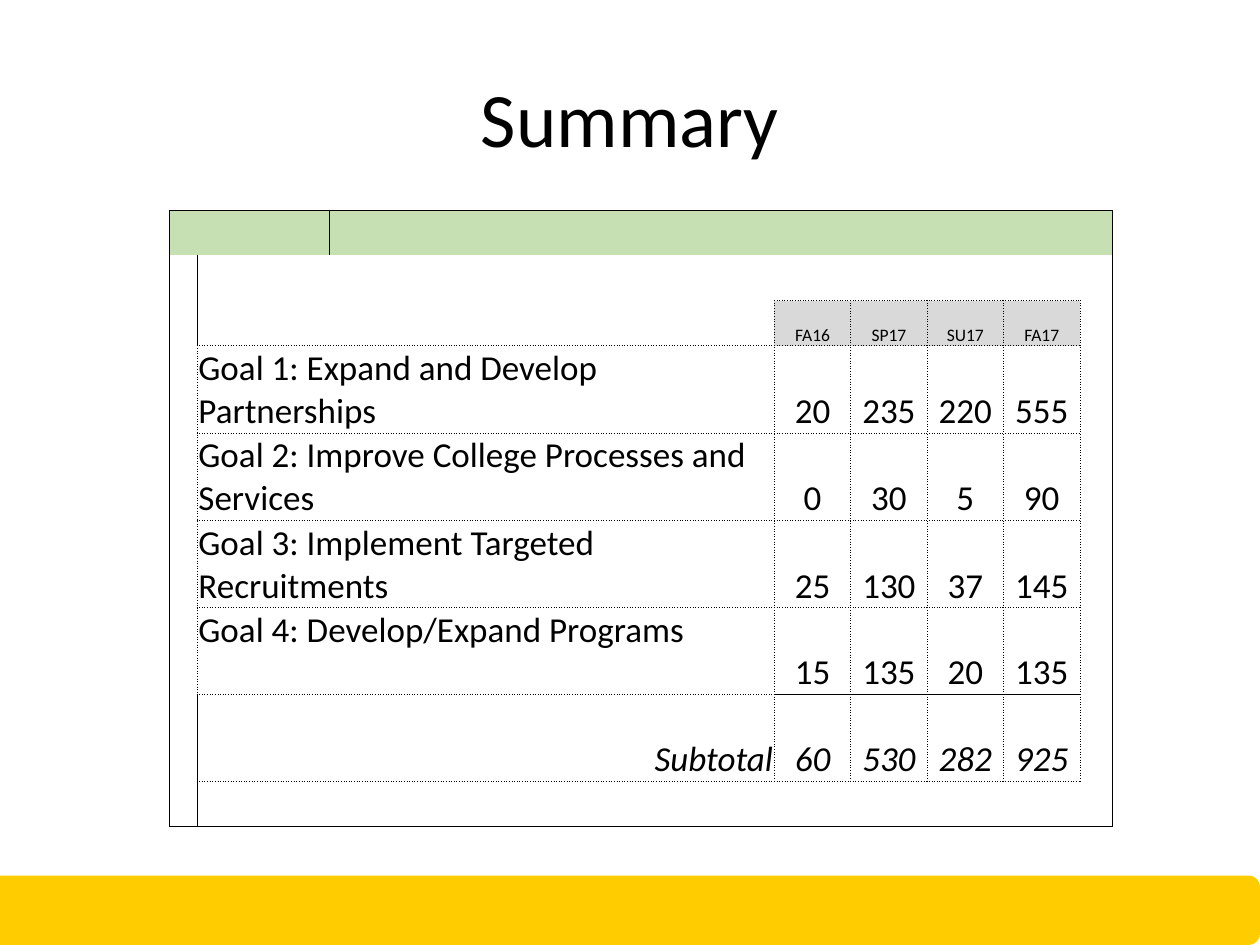
from lxml.etree import SubElement
from pptx import Presentation
from pptx.dml.color import RGBColor
from pptx.enum.shapes import MSO_SHAPE
from pptx.enum.text import MSO_ANCHOR, PP_ALIGN
from pptx.oxml.ns import qn
from pptx.util import Cm, Pt

BLACK = RGBColor(0x00, 0x00, 0x00)
GOLD = RGBColor(0xFF, 0xCC, 0x00)
GREEN = RGBColor(0xC6, 0xE0, 0xB4)
GRAY = RGBColor(0xD9, 0xD9, 0xD9)
FONT = "Calibri"
PLAIN = "{2D5ABB26-0587-4C30-8999-92F81FD0307C}"  # no style, no grid

TITLE = "Summary"
TERMS = ["FA16", "SP17", "SU17", "FA17"]
GOALS = [
    ("Goal 1: Expand and Develop Partnerships", [20, 235, 220, 555]),
    ("Goal 2: Improve College Processes and Services", [0, 30, 5, 90]),
    ("Goal 3: Implement Targeted Recruitments", [25, 130, 37, 145]),
    ("Goal 4: Develop/Expand Programs", [15, 135, 20, 135]),
]
TOTAL = ("Subtotal", [60, 530, 282, 925])

WIDTHS = [0.23, 0.56, 2.67] + [1.54] * 5 + [1.27] + [1.54] * 4 + [0.66]
HEIGHTS = [0.91] * 3 + [1.75] * 5 + [0.91]
HEAD, FIRST = 2, 3               # rows of the terms and of the first goal
SUM = FIRST + len(GOALS)         # row of the subtotal
NAME, NUM = 2, 9                 # columns of the goals and of the numbers
END = NUM + len(TERMS) - 1
LAST_ROW, LAST_COL = len(HEIGHTS) - 1, len(WIDTHS) - 1

SIDES = {"L": (0, -1, "R"), "R": (0, 1, "L"), "T": (-1, 0, "B"), "B": (1, 0, "T")}
SOLID, DOT, HEAVY = (0.5, "solid"), (0.5, "sysDot"), (1, "solid")


def mark(lines, row, col, side, pen):
    """Note a border on a cell and on the neighbour that shares it."""
    down, across, back = SIDES[side]
    lines[row, col, side] = pen
    lines[row + down, col + across, back] = pen


def frame(lines, top, left, bottom, right, pen):
    for row in range(top, bottom + 1):
        mark(lines, row, left, "L", pen)
        mark(lines, row, right, "R", pen)
    for col in range(left, right + 1):
        mark(lines, top, col, "T", pen)
        mark(lines, bottom, col, "B", pen)


def plan():
    """Return the pen of every cell border."""
    lines = {}
    frame(lines, 0, 1, LAST_ROW, LAST_COL, SOLID)
    for row in range(FIRST, SUM):
        frame(lines, row, NAME, row, NUM - 1, DOT)
    for row in range(HEAD, SUM + 1):
        for col in range(NUM, END + 1):
            frame(lines, row, col, row, col, DOT)
    for col in range(NUM, END + 1):
        mark(lines, SUM, col, "T", HEAVY)
    return lines


def border(cell, side, pen):
    width, dash = pen
    line = SubElement(cell._tc.get_or_add_tcPr(), qn("a:ln" + side), w=str(Pt(width)))
    fill = SubElement(line, qn("a:solidFill"))
    SubElement(fill, qn("a:srgbClr"), val=str(BLACK))
    SubElement(line, qn("a:prstDash"), val=dash)


def write(para, text, size, align, slant=False):
    para.alignment = align
    run = para.add_run()
    run.text = str(text)
    run.font.name = FONT
    run.font.size = Pt(size)
    run.font.italic = slant
    run.font.color.rgb = BLACK


def style(table):
    lines = plan()
    for row in range(len(HEIGHTS)):
        for col in range(len(WIDTHS)):
            cell = table.cell(row, col)
            cell.margin_left = cell.margin_right = cell.margin_top = Cm(0.03)
            cell.margin_bottom = 0
            cell.vertical_anchor = MSO_ANCHOR.BOTTOM
            for side in SIDES:
                if (row, col, side) in lines:
                    border(cell, side, lines[row, col, side])
            tint = None
            if row == 0 and col > 0:
                tint = GREEN
            elif row == HEAD and NUM <= col <= END:
                tint = GRAY
            if tint is None:
                cell.fill.background()
            else:
                cell.fill.solid()
                cell.fill.fore_color.rgb = tint


def fill_row(table, row, values, size, slant=False):
    for col, value in enumerate(values, NUM):
        para = table.cell(row, col).text_frame.paragraphs[0]
        write(para, value, size, PP_ALIGN.CENTER, slant)


def label(table, row, col, text, align, slant=False):
    cell = table.cell(row, col)
    cell.merge(table.cell(row, NUM - 1))
    write(cell.text_frame.paragraphs[0], text, 20, align, slant)
    return cell


def add_grid(slide):
    shape = slide.shapes.add_table(len(HEIGHTS), len(WIDTHS), Cm(3.18), Cm(4.24),
                                   Cm(sum(WIDTHS)), Cm(sum(HEIGHTS)))
    table = shape.table
    table._tbl.tblPr.find(qn("a:tableStyleId")).text = PLAIN
    table.first_row = table.horz_banding = False
    for col, width in zip(table.columns, WIDTHS):
        col.width = Cm(width)
    for row, height in zip(table.rows, HEIGHTS):
        row.height = Cm(height)
    style(table)
    table.cell(0, 1).merge(table.cell(0, 2))

    fill_row(table, HEAD, TERMS, 10)
    for row, (goal, values) in enumerate(GOALS, FIRST):
        cell = label(table, row, NAME, goal, PP_ALIGN.LEFT)
        cell.vertical_anchor = MSO_ANCHOR.TOP
        fill_row(table, row, values, 20)
    text, values = TOTAL
    label(table, SUM, NUM - 2, text, PP_ALIGN.RIGHT, True)
    fill_row(table, SUM, values, 20, True)


def add_bar(slide):
    bar = slide.shapes.add_shape(MSO_SHAPE.ROUNDED_RECTANGLE,
                                 Cm(-0.2), Cm(17.65), Cm(25.6), Cm(1.4))
    bar.shadow.inherit = False
    bar.fill.solid()
    bar.fill.fore_color.rgb = GOLD
    bar.line.fill.background()


def add_title(slide):
    title = slide.shapes.title
    title.left, title.top = Cm(1.27), Cm(0.76)
    title.width, title.height = Cm(22.86), Cm(3.18)
    title.text_frame.vertical_anchor = MSO_ANCHOR.MIDDLE
    write(title.text_frame.paragraphs[0], TITLE, 44, PP_ALIGN.CENTER)


def main():
    deck = Presentation()
    deck.slide_width, deck.slide_height = Cm(25.4), Cm(19.05)
    slide = deck.slides.add_slide(deck.slide_layouts[5])
    add_bar(slide)
    add_title(slide)
    add_grid(slide)
    deck.save("out.pptx")


if __name__ == "__main__":
    main()
